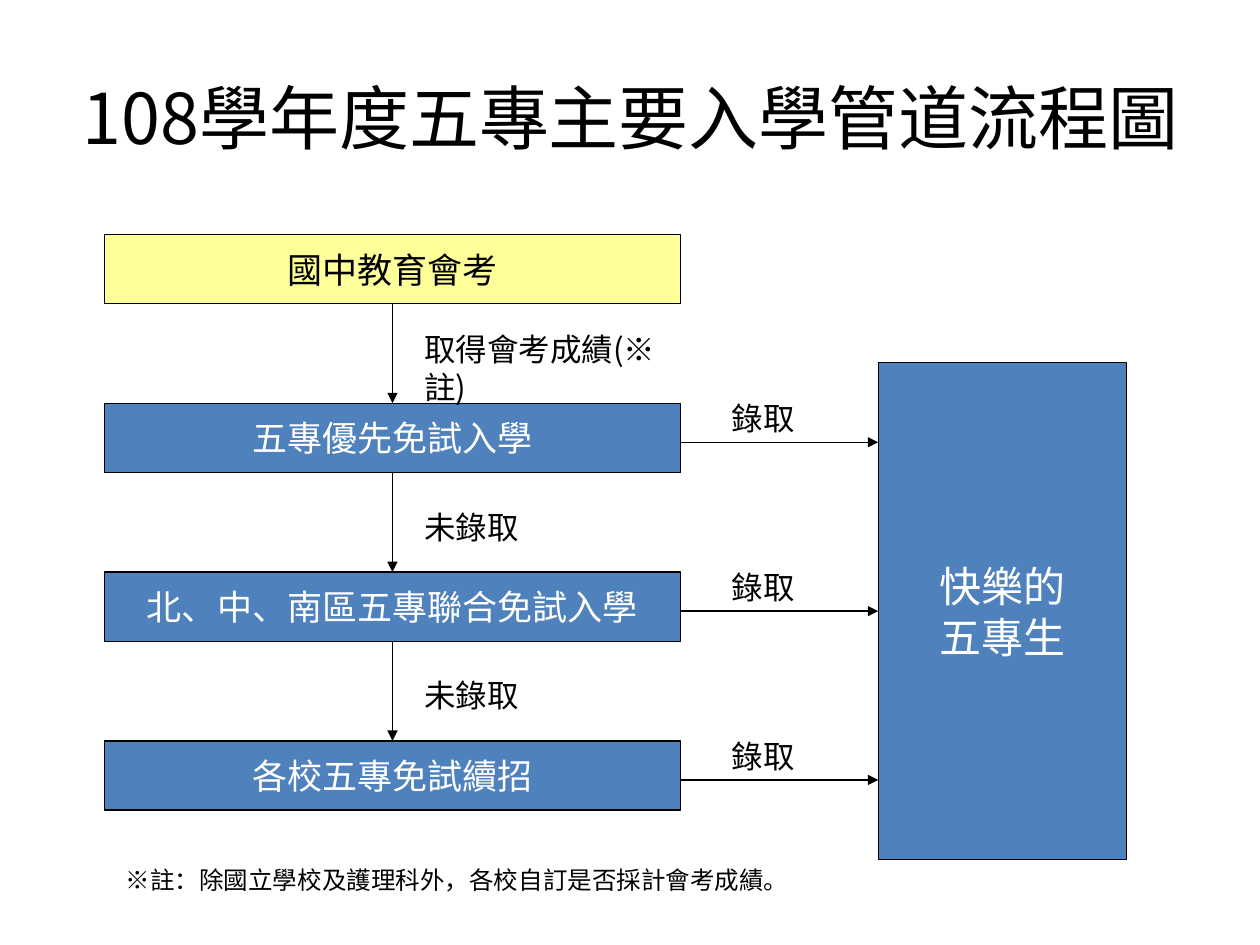
from pptx import Presentation
from pptx.dml.color import RGBColor
from pptx.enum import shapes, text
from pptx.oxml.ns import qn
from pptx.util import Inches, Pt
from lxml import etree

BLACK = RGBColor(0x00, 0x00, 0x00)
WHITE = RGBColor(0xFF, 0xFF, 0xFF)
YELLOW = RGBColor(0xFF, 0xFF, 0x99)
BLUE = RGBColor(0x4F, 0x81, 0xBD)
SANS = "Noto Sans CJK SC"
SERIF = "Times New Roman"

# Stage boxes: one column, equal steps
LEFT, TOP, WIDTH, HEIGHT, STEP = 0.83, 1.86, 4.57, 0.55, 1.34
MID = LEFT + WIDTH / 2
GOAL = 6.97
STAGES = ["國中教育會考", "五專優先免試入學",
          "北、中、南區五專聯合免試入學", "各校五專免試續招"]


def write(shape, words, size, color, align=None, anchor=None, wrap=True, font=SANS):
    frame = shape.text_frame
    frame.text = words
    frame.word_wrap = wrap
    if anchor is not None:
        frame.vertical_anchor = anchor
    for para in frame.paragraphs:
        para.alignment = align
        for run in para.runs:
            run.font.size = Pt(size)
            run.font.name = font
            run.font.color.rgb = color
            # East Asian glyphs need their own typeface
            east = etree.SubElement(run._r.get_or_add_rPr(), qn("a:ea"))
            east.set("typeface", SANS)


def add_box(slide, x, y, w, h, words, size, fill, color):
    box = slide.shapes.add_shape(shapes.MSO_SHAPE.RECTANGLE,
                                 Inches(x), Inches(y), Inches(w), Inches(h))
    box.shadow.inherit = False
    box.fill.solid()
    box.fill.fore_color.rgb = fill
    box.line.color.rgb = BLACK
    box.line.width = Pt(0.75)
    write(box, words, size, color, text.PP_ALIGN.CENTER,
          text.MSO_ANCHOR.MIDDLE, wrap=False)


def add_label(slide, x, y, w, h, words, size=18, **style):
    label = slide.shapes.add_textbox(Inches(x), Inches(y), Inches(w), Inches(h))
    write(label, words, size, BLACK, **style)


def add_arrow(slide, x1, y1, x2, y2):
    arrow = slide.shapes.add_connector(shapes.MSO_CONNECTOR.STRAIGHT,
                                       Inches(x1), Inches(y1), Inches(x2), Inches(y2))
    arrow.line.color.rgb = BLACK
    arrow.line.width = Pt(0.75)
    etree.SubElement(arrow.line._get_or_add_ln(), qn("a:tailEnd")).set("type", "triangle")
    etree.SubElement(arrow._element.spPr, qn("a:effectLst"))


def main():
    deck = Presentation()
    deck.slide_width, deck.slide_height = Inches(10), Inches(7.5)
    slide = deck.slides.add_slide(deck.slide_layouts[6])

    # Title
    add_label(slide, 0.2, 0.3, 9.61, 1.25, "108學年度五專主要入學管道流程圖", 40,
              align=text.PP_ALIGN.CENTER, anchor=text.MSO_ANCHOR.MIDDLE)

    # Final goal
    add_box(slide, GOAL, 2.88, 1.97, 3.94, "快樂的\n五專生", 24, BLUE, WHITE)

    # Stages, with an arrow down to each next one and across to the goal
    for i, stage in enumerate(STAGES):
        y = TOP + i * STEP
        fill, color = (BLUE, WHITE) if i else (YELLOW, BLACK)
        add_box(slide, LEFT, y, WIDTH, HEIGHT, stage, 20, fill, color)
        if i:
            add_arrow(slide, MID, y - STEP + HEIGHT, MID, y)
            add_arrow(slide, LEFT + WIDTH, y + 0.31, GOAL, y + 0.31)
            add_label(slide, 5.71, y - 0.08, 0.7, 0.4, "錄取", wrap=False)

    # Labels beside the downward arrows
    add_label(slide, 3.27, 2.57, 2.2, 0.7, "取得會考成績(※註)")
    for y in (3.98, 3.98 + STEP):
        add_label(slide, 3.27, y, 2.54, 0.4, "未錄取")

    # Footnote
    add_label(slide, 0.9, 6.82, 5.9, 0.34,
              "※註：除國立學校及護理科外，各校自訂是否採計會考成績。", 14, font=SERIF)

    deck.save("out.pptx")


if __name__ == "__main__":
    main()
